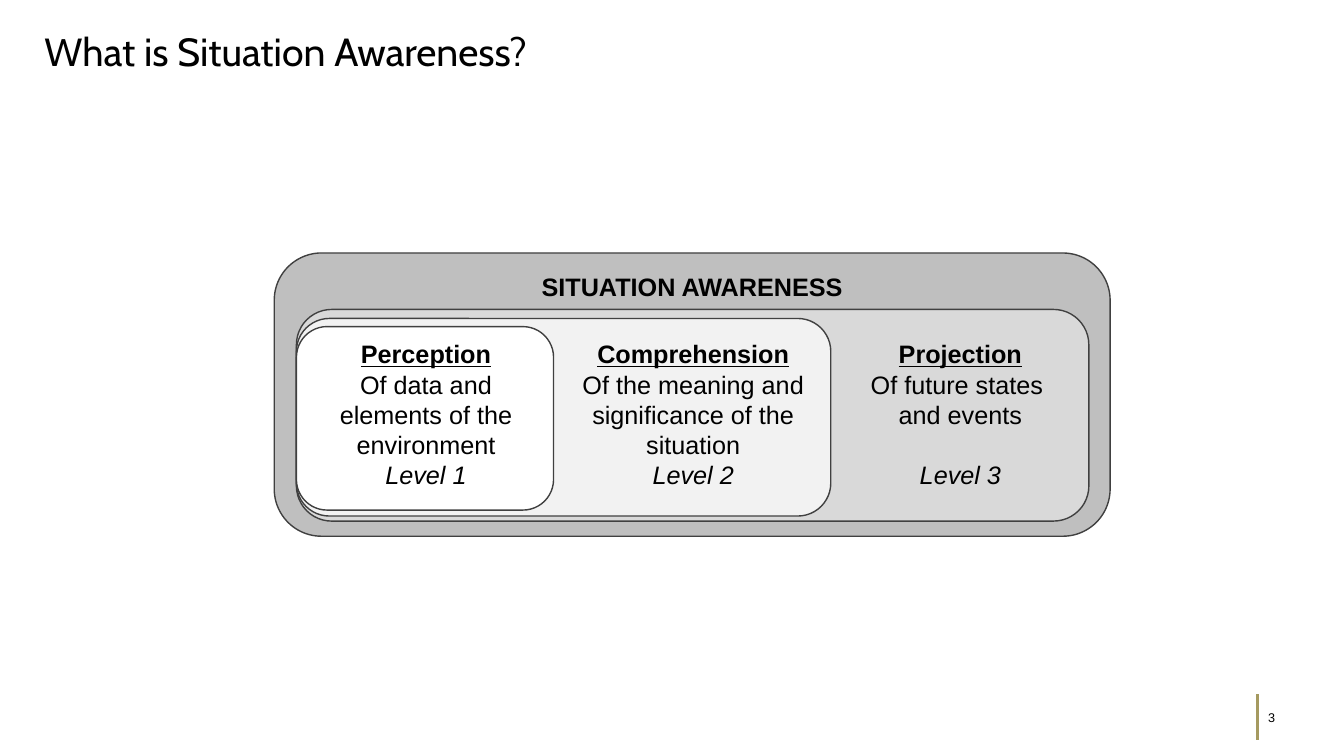
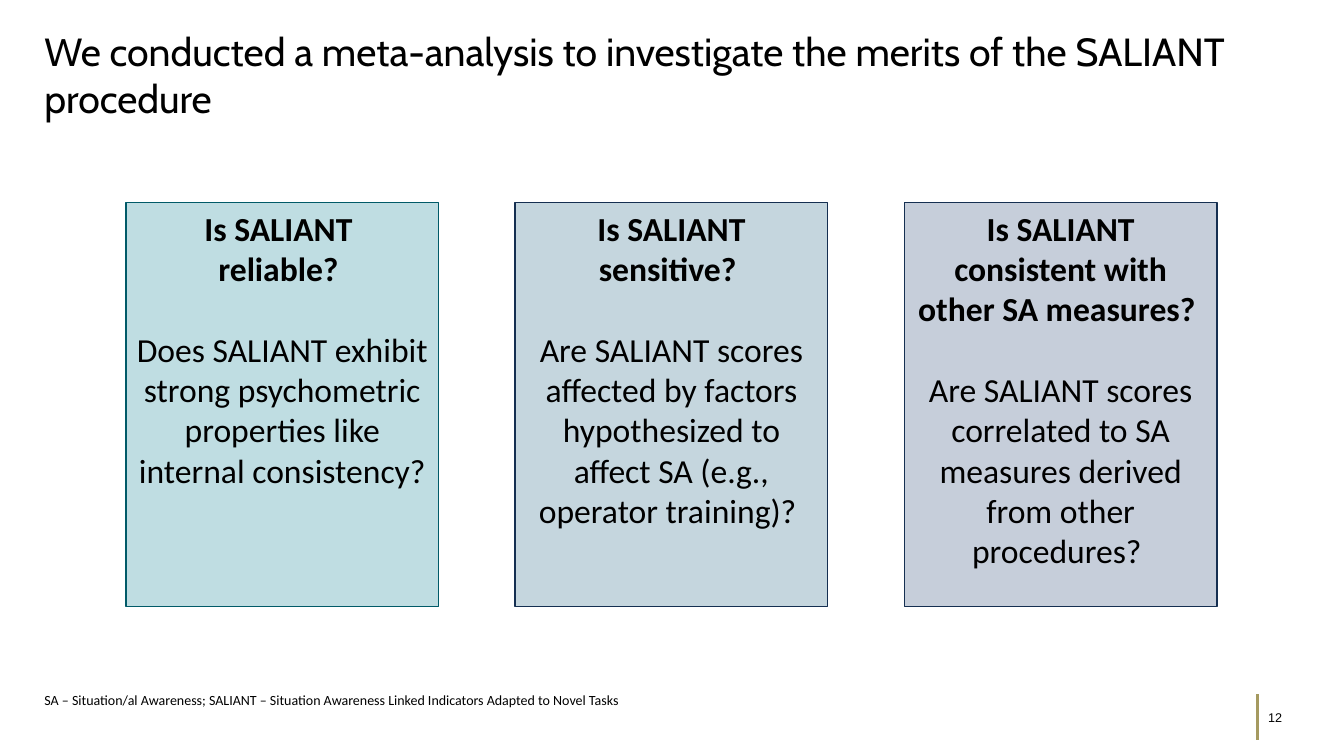
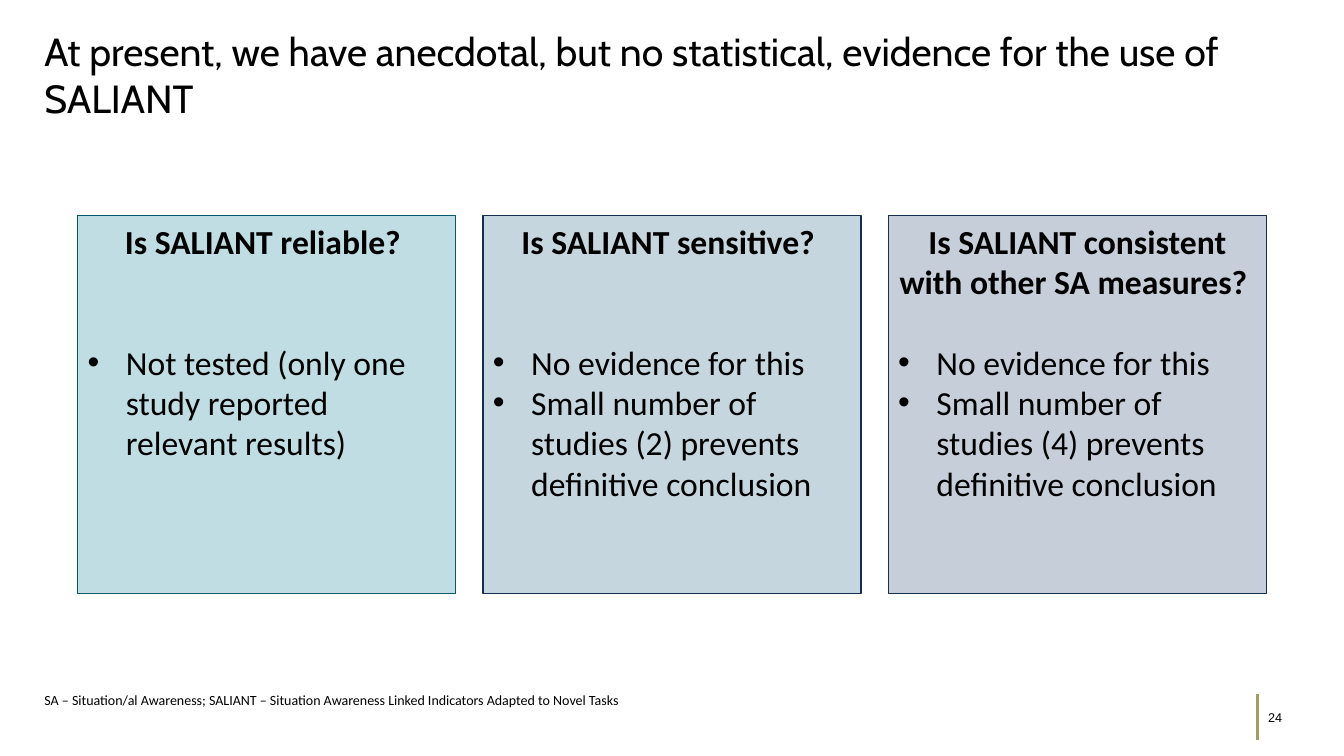
from dataclasses import dataclass

from lxml import etree
from pptx import Presentation
from pptx.dml.color import RGBColor
from pptx.enum.shapes import MSO_CONNECTOR as Line, MSO_SHAPE as Shape
from pptx.enum.text import MSO_ANCHOR as Anchor, MSO_AUTO_SIZE as Fit, PP_ALIGN as Align
from pptx.oxml.ns import qn
from pptx.util import Inches, Pt


@dataclass(frozen=True)
class Theme:
    ink: str = "000000"
    accent: str = "A59A60"
    outline: str = "404040"
    awareness: str = "BFBFBF"
    levels: tuple = ("D9D9D9", "F2F2F2", "FFFFFF")
    questions: tuple = (("00798C", "005A68"), ("195D7E", "152F51"), ("1C3F6E", "152F51"))
    question_alpha: int = 25
    title: tuple = ("Cabin", 28)
    diagram: tuple = ("Arial", 18)
    question: tuple = ("Calibri", 24)
    footnote: tuple = ("Calibri", 10)
    number: tuple = ("Arial", 9)
    line_height: float = 1.2


theme = Theme()


def write(shape, lines, face, align=Align.LEFT, anchor=Anchor.TOP):
    """Fill a shape with (text, options) lines; gap counts empty line heights."""
    font_name, size = face
    frame = shape.text_frame
    for name, value in {"word_wrap": True, "auto_size": Fit.NONE, "vertical_anchor": anchor}.items():
        setattr(frame, name, value)
    for index, (text, options) in enumerate(lines):
        paragraph = frame.paragraphs[0] if index == 0 else frame.add_paragraph()
        paragraph.text = text
        bullet = options.get("bullet", False)
        properties = paragraph._p.get_or_add_pPr()
        indent = Inches(0.38) if bullet else 0
        properties.set("marL", str(indent))
        properties.set("indent", str(-indent))
        if bullet:
            etree.SubElement(properties, qn("a:buFont")).set("typeface", "Arial")
            etree.SubElement(properties, qn("a:buChar")).set("char", "•")
        else:
            etree.SubElement(properties, qn("a:buNone"))
        paragraph.alignment = Align.LEFT if bullet else align
        paragraph.space_before = Pt(round(options.get("gap", 0) * size * theme.line_height, 1))
        font_format = {"name": font_name, "size": Pt(size)}
        font_format.update(options.get("font", {}))
        for run in paragraph.runs:
            for name, value in font_format.items():
                setattr(run.font, name, value)
            run.font.color.rgb = RGBColor.from_string(theme.ink)


def panel(slide, kind, box, fill, outline, alpha=100):
    """Draw a filled, outlined shape without shadow."""
    shape = slide.shapes.add_shape(kind, *map(Inches, box))
    shape.shadow.inherit = False
    shape.fill.solid()
    shape.fill.fore_color.rgb = RGBColor.from_string(fill)
    if alpha < 100:
        color = shape.element.spPr.find(qn("a:solidFill")).find(qn("a:srgbClr"))
        etree.SubElement(color, qn("a:alpha")).set("val", str(alpha * 1000))
    shape.line.color.rgb = RGBColor.from_string(outline)
    shape.line.width = Pt(1)
    return shape


prs = Presentation()
prs.slide_width, prs.slide_height = Inches(13.33), Inches(7.5)
title_only, title_and_body = prs.slide_layouts[5], prs.slide_layouts[1]

# Shared parts: title, footnote, slide number
abbreviations = ("SA – Situation/al Awareness; SALIANT – Situation Awareness Linked "
                 "Indicators Adapted to Novel Tasks")
outline = [
    (title_only, 3, "What is Situation Awareness?"),
    (title_and_body, 12,
     "We conducted a meta-analysis to investigate the merits of the SALIANT procedure"),
    (title_and_body, 24,
     "At present, we have anecdotal, but no statistical, evidence for the use of SALIANT"),
]
for layout, page, heading in outline:
    slide = prs.slides.add_slide(layout)
    number = slide.shapes.add_textbox(*map(Inches, (12.48, 6.98, 0.52, 0.27)))
    write(number, [(str(page), {})], theme.number, anchor=Anchor.MIDDLE)
    parts = [(slide.shapes.title, (0.34, 0.22, 12.65, 1), heading, theme.title)]
    if layout is title_and_body:
        parts.append((slide.placeholders[1], (0.34, 6.81, 10.88, 0.6), abbreviations, theme.footnote))
    for placeholder, box, text, face in parts:
        for name, value in zip(("left", "top", "width", "height"), box):
            setattr(placeholder, name, Inches(value))
        write(placeholder, [(text, {})], face)
definition, questions, answers = prs.slides

# Accent rule beside the number, moved to the master
rule = definition.shapes.add_connector(Line.STRAIGHT, *map(Inches, (12.47, 6.89, 12.47, 7.34)))
rule.line.color.rgb = RGBColor.from_string(theme.accent)
rule.line.width = Pt(2)
etree.SubElement(rule.element.spPr, qn("a:effectLst"))
prs.slide_master.element.cSld.spTree.append(rule.element)

# Definition: three nested levels inside situation awareness
awareness = panel(definition, Shape.ROUNDED_RECTANGLE, (2.72, 2.51, 8.29, 2.81),
                  theme.awareness, theme.outline)
write(awareness, [("SITUATION AWARENESS", {"font": {"bold": True}})], theme.diagram, Align.CENTER)

level_sizes = [(3.07, 7.86, 2.1), (3.16, 5.3, 1.96), (3.24, 2.55, 1.82)]
for (top, width, height), fill in zip(level_sizes, theme.levels):
    panel(definition, Shape.ROUNDED_RECTANGLE, (2.94, top, width, height), fill, theme.outline)

levels = [
    ("Perception", "Of data and elements of the environment", 0),
    ("Comprehension", "Of the meaning and significance of the situation", 0),
    ("Projection", "Of future states \vand events", 1),
]
for column, (level, meaning, gap) in enumerate(levels):
    label = definition.shapes.add_textbox(*map(Inches, (2.95 + 2.65 * column, 3.31, 2.55, 1.62)))
    write(label, [
        (level, {"font": {"bold": True, "underline": True}}),
        (meaning, {}),
        (f"Level {column + 1}", {"gap": gap, "font": {"italic": True}}),
    ], theme.diagram, Align.CENTER)

# Questions and answers: three tinted columns on each slide
# Each column: question, empty lines after it, statements
question_columns = [
    ("Is SALIANT \vreliable? ", 1,
     ["Does SALIANT exhibit strong psychometric properties like internal consistency?"]),
    ("Is SALIANT sensitive? ", 1,
     ["Are SALIANT scores affected by factors hypothesized to affect SA "
      "(e.g., operator training)? "]),
    ("Is SALIANT consistent with other SA measures? ", 1,
     ["Are SALIANT scores correlated to SA measures derived from other procedures? "]),
]
answer_columns = [
    ("Is SALIANT reliable? ", 2, ["Not tested (only one study reported relevant results)"]),
    ("Is SALIANT sensitive? ", 2,
     ["No evidence for this", "Small number of studies (2) prevents definitive conclusion"]),
    ("Is SALIANT consistent with other SA measures? ", 1,
     ["No evidence for this", "Small number of studies (4) prevents definitive conclusion"]),
]
column_sets = [
    (questions, question_columns, (1.25, 2.01, 3.1, 4.01), 3.86, False),
    (answers, answer_columns, (0.77, 2.14, 3.75, 3.75), 4.02, True),
]
for slide, columns, (left, top, width, height), pitch, bullet in column_sets:
    for column, (question, gap, statements) in enumerate(columns):
        fill, border = theme.questions[column]
        card = panel(slide, Shape.RECTANGLE, (left + pitch * column, top, width, height),
                     fill, border, theme.question_alpha)
        lines = [(question, {"font": {"bold": True}})]
        for row, statement in enumerate(statements):
            lines.append((statement, {"bullet": bullet, "gap": 0 if row else gap}))
        write(card, lines, theme.question, Align.CENTER)

prs.save("out.pptx")
